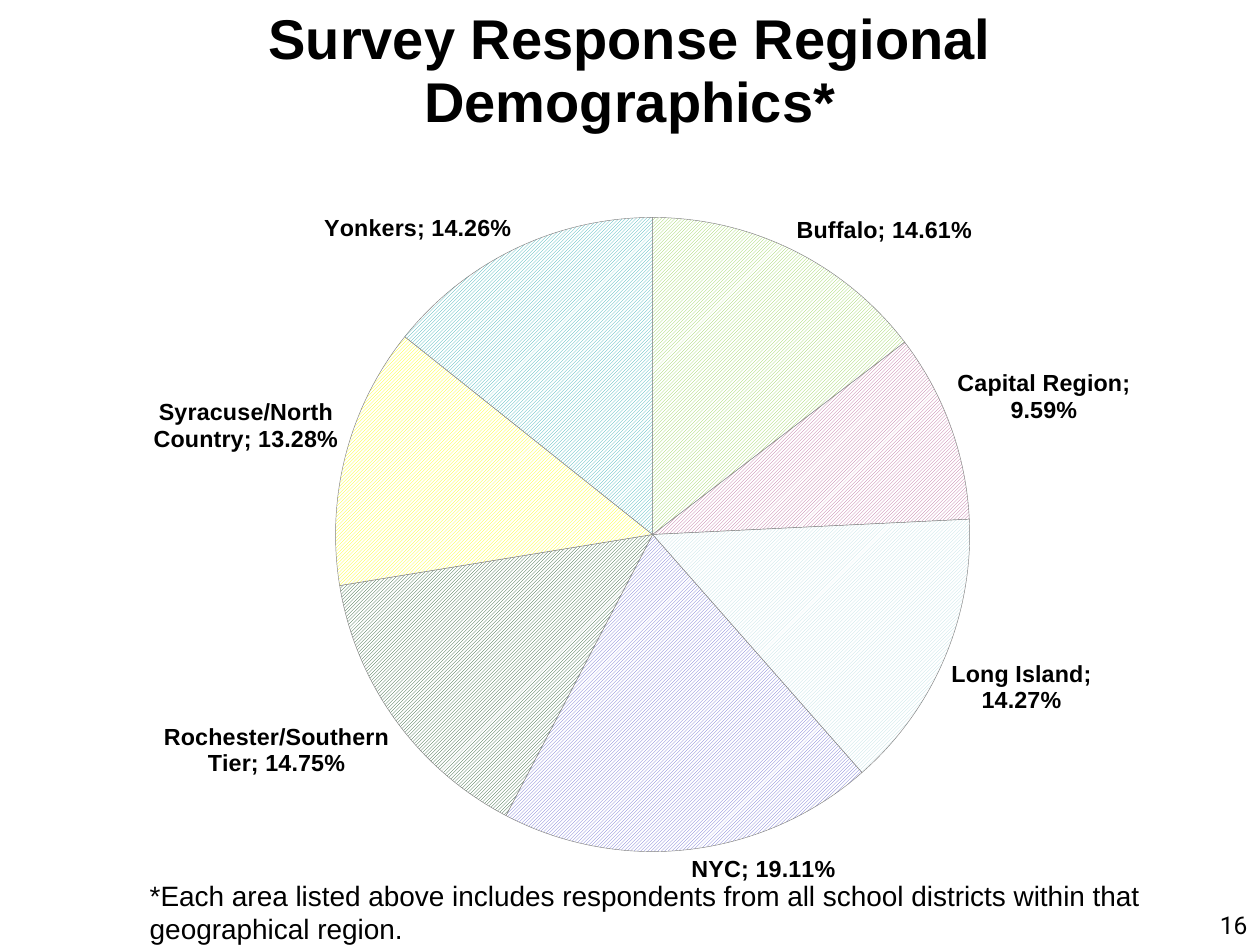
from lxml.etree import SubElement
from pptx import Presentation
from pptx.chart.data import CategoryChartData
from pptx.dml.color import RGBColor
from pptx.enum.chart import XL_CHART_TYPE as ChartType, XL_LABEL_POSITION as LabelPosition
from pptx.enum.dml import MSO_PATTERN as Pattern
from pptx.enum.text import MSO_ANCHOR as Anchor, PP_ALIGN as Align
from pptx.oxml import parse_xml
from pptx.oxml.ns import nsdecls, qn
from pptx.util import Inches, Pt

WIDTH, HEIGHT = 10, 7.5

# Region, share of responses, hatch colour
REGIONS = [
    ("Buffalo", 0.1461, "92D050"),
    ("Capital Region", 0.0959, "B96798"),
    ("Long Island", 0.1427, "BBE0E3"),
    ("NYC", 0.1911, "6B6BCF"),
    ("Rochester/Southern Tier", 0.1475, "1E5427"),
    ("Syracuse/North Country", 0.1328, "FFFF00"),
    ("Yonkers", 0.1426, "32AEB4"),
]
# Plot area as shares of the chart frame
PLOT_AREA = {"x": 0.24, "y": 0.05, "w": 0.56, "h": 0.88}


def color(value):
    return RGBColor.from_string(value)


def set_values(target, values):
    for name, value in values.items():
        setattr(target, name, value)


def set_font(font, size, name="Arial", bold=False):
    set_values(font, {"size": Pt(size), "name": name, "bold": bold})
    font.color.rgb = color("000000")


def fill_text(box, text, size, align=Align.LEFT, **font):
    box.text_frame.word_wrap = True
    para = box.text_frame.paragraphs[0]
    para.alignment = align
    span = para.add_run()
    span.text = text
    set_font(span.font, size, **font)
    return para


def add_text(page, frame, text, size, **style):
    box = page.shapes.add_textbox(*map(Inches, frame))
    fill_text(box, text, size, **style)


def set_title(page, frame, text):
    title = page.shapes.title
    set_values(title, dict(zip(("left", "top", "width", "height"), map(Inches, frame))))
    title.text_frame.vertical_anchor = Anchor.MIDDLE
    para = fill_text(title, text, 32, Align.CENTER, bold=True)
    para.line_spacing = Pt(36)


def place_plot(chart):
    """Fix the inner plot area inside the chart frame."""
    plot_area = chart.plots[0]._element.getparent()
    for old in plot_area.findall(qn("c:layout")):
        plot_area.remove(old)
    layout = parse_xml(f"<c:layout {nsdecls('c')}><c:manualLayout/></c:layout>")
    settings = {"layoutTarget": "inner", "xMode": "edge", "yMode": "edge", **PLOT_AREA}
    for tag, value in settings.items():
        SubElement(layout[0], qn(f"c:{tag}")).set("val", str(value))
    plot_area.insert(0, layout)


def label_slices(series):
    labels = series.data_labels
    set_values(labels, {
        "show_value": True, "show_category_name": True, "show_percentage": False,
        "show_legend_key": False, "show_series_name": False,
        "number_format": "0.00%", "number_format_is_linked": False,
        "position": LabelPosition.OUTSIDE_END,
    })
    set_font(labels.font, 13.3, bold=True)
    separator = parse_xml(f"<c:separator {nsdecls('c')}>; </c:separator>")
    labels._element.find(qn("c:showBubbleSize")).addnext(separator)


def add_pie(page, frame):
    data = CategoryChartData(number_format="0.00%")
    data.categories = [name for name, _, _ in REGIONS]
    data.add_series("Series 1", [share for _, share, _ in REGIONS])
    chart = page.shapes.add_chart(ChartType.PIE, *map(Inches, frame), data).chart
    set_values(chart, {"has_legend": False, "has_title": False})
    set_font(chart.font, 10)
    chart.plots[0].vary_by_categories = True
    place_plot(chart)

    series = chart.plots[0].series[0]
    for index, (_, _, hatch) in enumerate(REGIONS):
        style = series.points[index].format
        style.fill.patterned()
        style.fill.pattern = (Pattern.DARK_UPWARD_DIAGONAL if index
                              else Pattern.LIGHT_UPWARD_DIAGONAL)
        style.fill.fore_color.rgb = color(hatch)
        style.fill.back_color.rgb = color("FFFFFF")
        style.line.color.rgb = color("808080")
        style.line.width = Pt(0.25)
    label_slices(series)


def main():
    deck = Presentation()
    deck.slide_width, deck.slide_height = Inches(WIDTH), Inches(HEIGHT)
    page = deck.slides.add_slide(deck.slide_layouts[5])

    margin = 0.05 * WIDTH
    content = WIDTH - 2 * margin
    add_pie(page, (margin, 1.44, content, 5.72))
    # Page number in the bottom right corner
    add_text(page, (7.67, 7.17, 2.33, 0.33), "16", 14, align=Align.RIGHT, name="Roboto")
    set_title(page, (margin, 0.15, content, 0.82), "Survey Response Regional Demographics*")
    # Footnote
    add_text(page, (1.09, 6.92, 8.53, 0.64),
             "*Each area listed above includes respondents from all school districts "
             "within that geographical region.", 16)
    deck.save("out.pptx")


if __name__ == "__main__":
    main()
